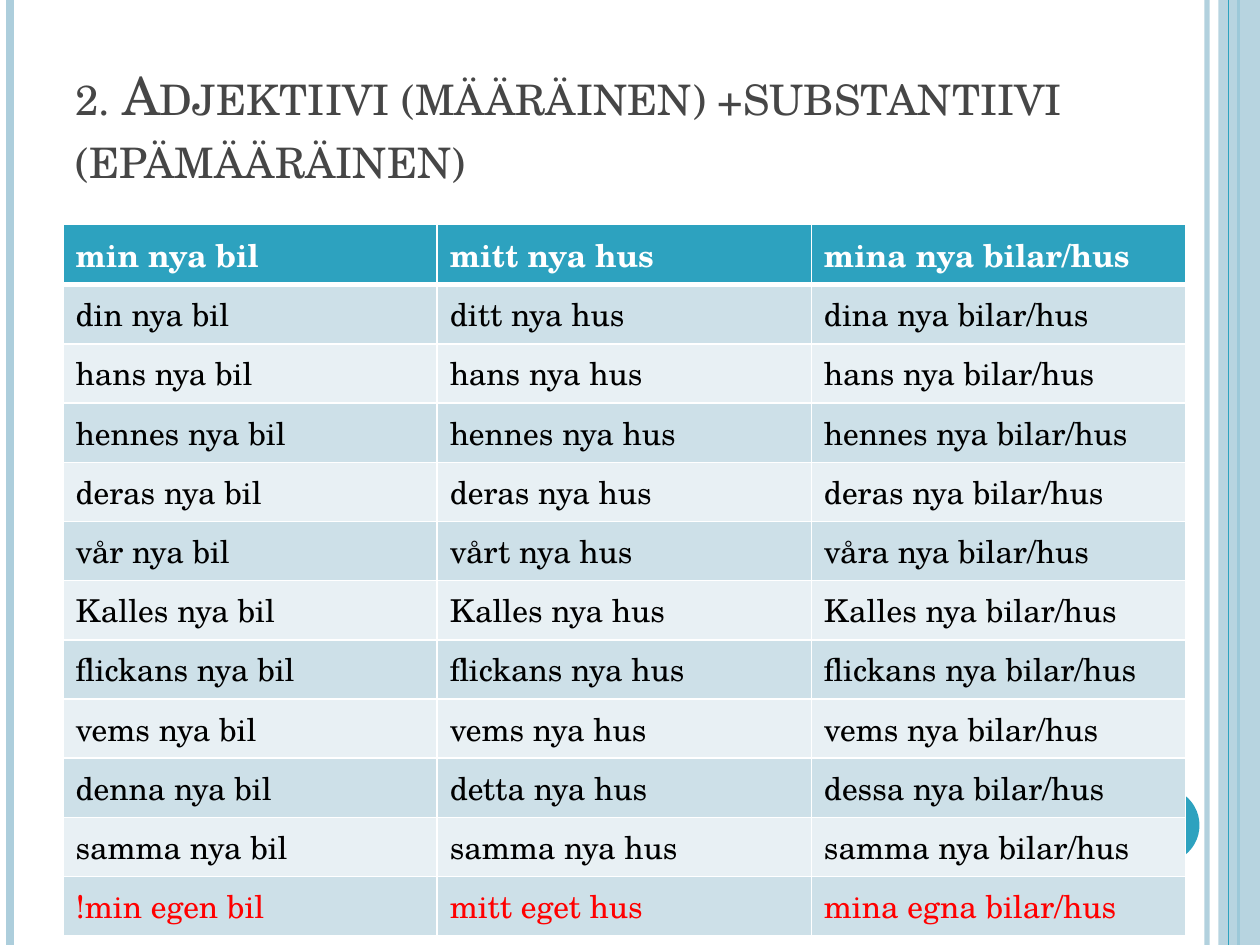
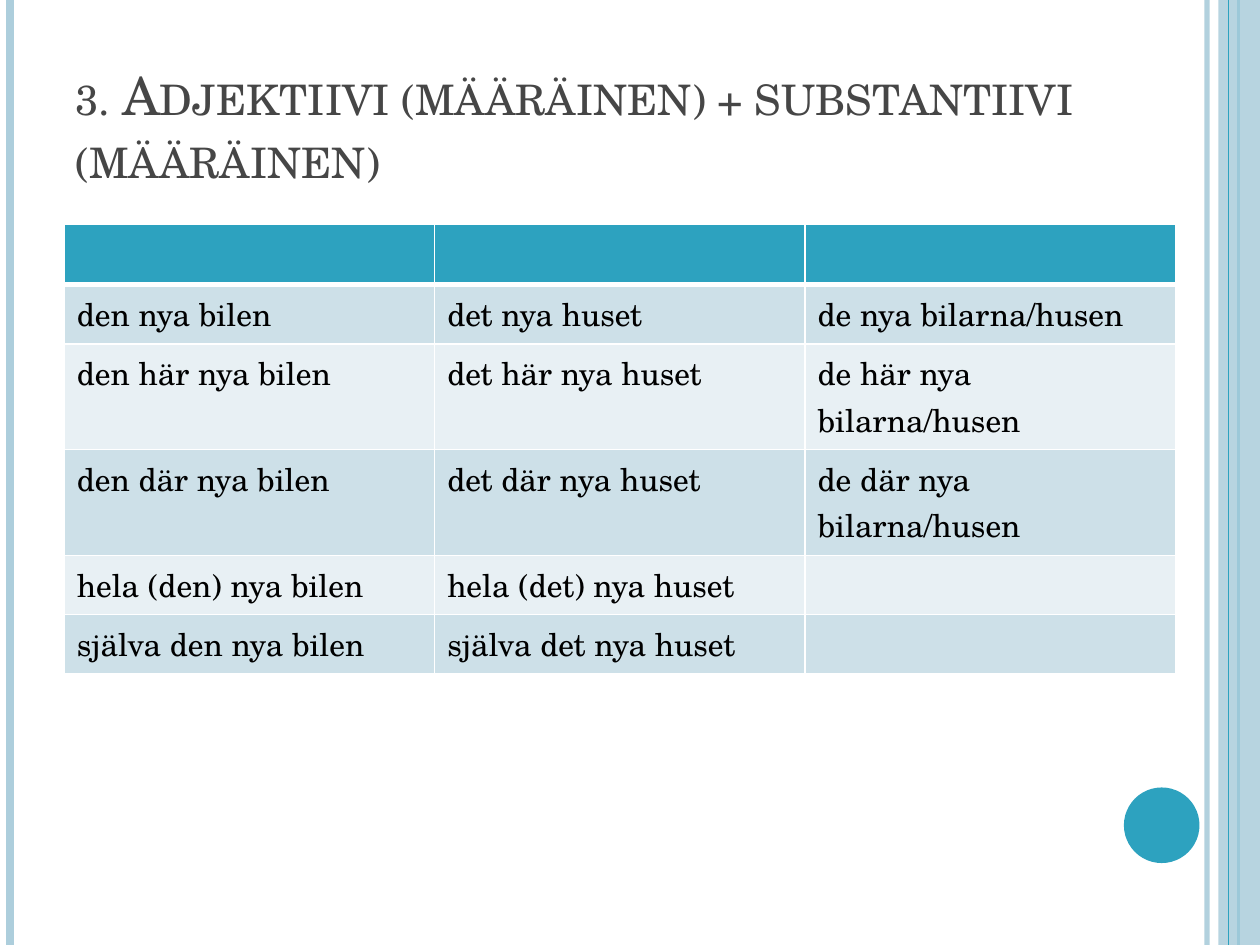
"""Build two Swedish grammar slides with adjective and noun tables."""
import dataclasses

import lxml.etree
import pptx
import pptx.dml.color
import pptx.enum.shapes
import pptx.enum.text
import pptx.oxml.ns
import pptx.util

Inches = pptx.util.Inches
qn = pptx.oxml.ns.qn


@dataclasses.dataclass(frozen=True)
class Theme:
    font: str = "TeX Gyre Schola"
    title_size: int = 30
    table_size: int = 18
    title: str = "464646"
    accent: str = "2DA2BF"
    rail: str = "ADCEDC"
    band_dark: str = "CDE0E8"
    band_light: str = "E8F0F4"
    white: str = "FFFFFF"
    black: str = "000000"
    warning: str = "FF0000"


theme = Theme()


def paint(fill, color, alpha=100):
    fill.solid()
    fill.fore_color.rgb = pptx.dml.color.RGBColor.from_string(color)
    if alpha < 100:
        node = next(fill._xPr.iter(qn("a:srgbClr")))
        lxml.etree.SubElement(node, qn("a:alpha"), val=str(alpha * 1000))


def write(para, text, size, color, bold=False):
    span = para.add_run()
    span.text = text
    span.font.name = theme.font
    span.font.size = pptx.util.Pt(size)
    span.font.bold = bold
    span.font.color.rgb = pptx.dml.color.RGBColor.from_string(color)
    return span


possessives = [
    ("din", "ditt", "dina"), ("hans",) * 3, ("hennes",) * 3, ("deras",) * 3,
    ("vår", "vårt", "våra"), ("Kalles",) * 3, ("flickans",) * 3, ("vems",) * 3,
    ("denna", "detta", "dessa"), ("samma",) * 3,
]
nouns = ("bil", "hus", "bilar/hus")
indefinite_rows = [
    [f"{word} nya {noun}" for word, noun in zip(words, nouns)]
    for words in [("min", "mitt", "mina"), *possessives]
]
indefinite_rows.append(["!min egen bil", "mitt eget hus", "mina egna bilar/hus"])

definite_rows = [
    ["", "", ""],
    ["den nya bilen", "det nya huset", "de nya bilarna/husen"],
    ["den här nya bilen", "det här nya huset", "de här nya bilarna/husen"],
    ["den där nya bilen", "det där nya huset", "de där nya bilarna/husen"],
    ["hela (den) nya bilen", "hela (det) nya huset", ""],
    ["själva den nya bilen", "själva det nya huset", ""],
]

lessons = [
    ("2. Adjektiivi (määräinen) +substantiivi (epämääräinen)",
     indefinite_rows, 0.5, 2.97, len(indefinite_rows) - 1),
    ("3. Adjektiivi (määräinen) + substantiivi (määräinen)",
     definite_rows, 0.51, 2.94, None),
]
header_height, line_row_height, wrapped_row_height = 0.48, 0.47, 0.84
longest_line = 22

rails = [
    (9.58, theme.rail, 3, 93),
    (0.08, theme.rail, 4.5, 100),
    (9.83, theme.accent, 1.5, 100),
    (9.75, theme.accent, 0.75, 100),
]
shapes_by_name = pptx.enum.shapes.MSO_SHAPE
decorations = [
    (shapes_by_name.RECTANGLE, (9.67, 0, 0.33, 7.5), theme.rail, 87),
    (shapes_by_name.OVAL, (8.92, 6.25, 0.6, 0.6), theme.accent, 100),
]

deck = pptx.Presentation()
deck.slide_width = Inches(10)
deck.slide_height = Inches(7.5)

for title, rows, table_left, column_width, exception_row in lessons:
    page = deck.slides.add_slide(deck.slide_layouts[6])
    paint(page.background.fill, theme.white)

    side_lines = []
    for x, color, width, alpha in rails:
        rail = page.shapes.add_connector(
            pptx.enum.shapes.MSO_CONNECTOR.STRAIGHT,
            Inches(x), Inches(0), Inches(x), Inches(7.5))
        rail.line.width = pptx.util.Pt(width)
        paint(rail.line.fill, color, alpha)
        lxml.etree.SubElement(rail._element.spPr, qn("a:effectLst"))
        side_lines.append(rail)

    for kind, frame, color, alpha in decorations:
        shape = page.shapes.add_shape(kind, *map(Inches, frame))
        shape.shadow.inherit = False
        shape.line.fill.background()
        paint(shape.fill, color, alpha)
        if kind == shapes_by_name.RECTANGLE:
            side_lines[-1]._element.addprevious(shape._element)

    box = page.shapes.add_textbox(*map(Inches, (0.5, 0.3, 8.17, 1.25)))
    box.text_frame.word_wrap = True
    box.text_frame.vertical_anchor = pptx.enum.text.MSO_ANCHOR.BOTTOM
    span = write(box.text_frame.paragraphs[0], title, theme.title_size, theme.title)
    span.font._element.set("cap", "small")

    heights = [header_height] + [
        wrapped_row_height if max(map(len, row)) > longest_line else line_row_height
        for row in rows[1:]
    ]
    table = page.shapes.add_table(
        len(rows), 3, Inches(table_left), Inches(1.78),
        Inches(3 * column_width), Inches(sum(heights))).table
    table.first_row = False
    table.horz_banding = False
    for column in table.columns:
        column.width = Inches(column_width)

    for row_index, row in enumerate(rows):
        table.rows[row_index].height = Inches(heights[row_index])
        header = row_index == 0
        if header:
            fill_color, text_color = theme.accent, theme.white
        else:
            fill_color = theme.band_dark if row_index % 2 else theme.band_light
            text_color = theme.warning if row_index == exception_row else theme.black
        edges = {"L": 1, "R": 1, "T": 3 if row_index == 1 else 1, "B": 3 if header else 1}
        for column_index, text in enumerate(row):
            cell = table.cell(row_index, column_index)
            properties = cell._tc.get_or_add_tcPr()
            for side, width in edges.items():
                edge = lxml.etree.SubElement(
                    properties, qn(f"a:ln{side}"), w=str(pptx.util.Pt(width)))
                solid = lxml.etree.SubElement(edge, qn("a:solidFill"))
                lxml.etree.SubElement(solid, qn("a:srgbClr"), val=theme.white)
            paint(cell.fill, fill_color)
            if text:
                write(cell.text_frame.paragraphs[0], text,
                      theme.table_size, text_color, header)

deck.save("out.pptx")
